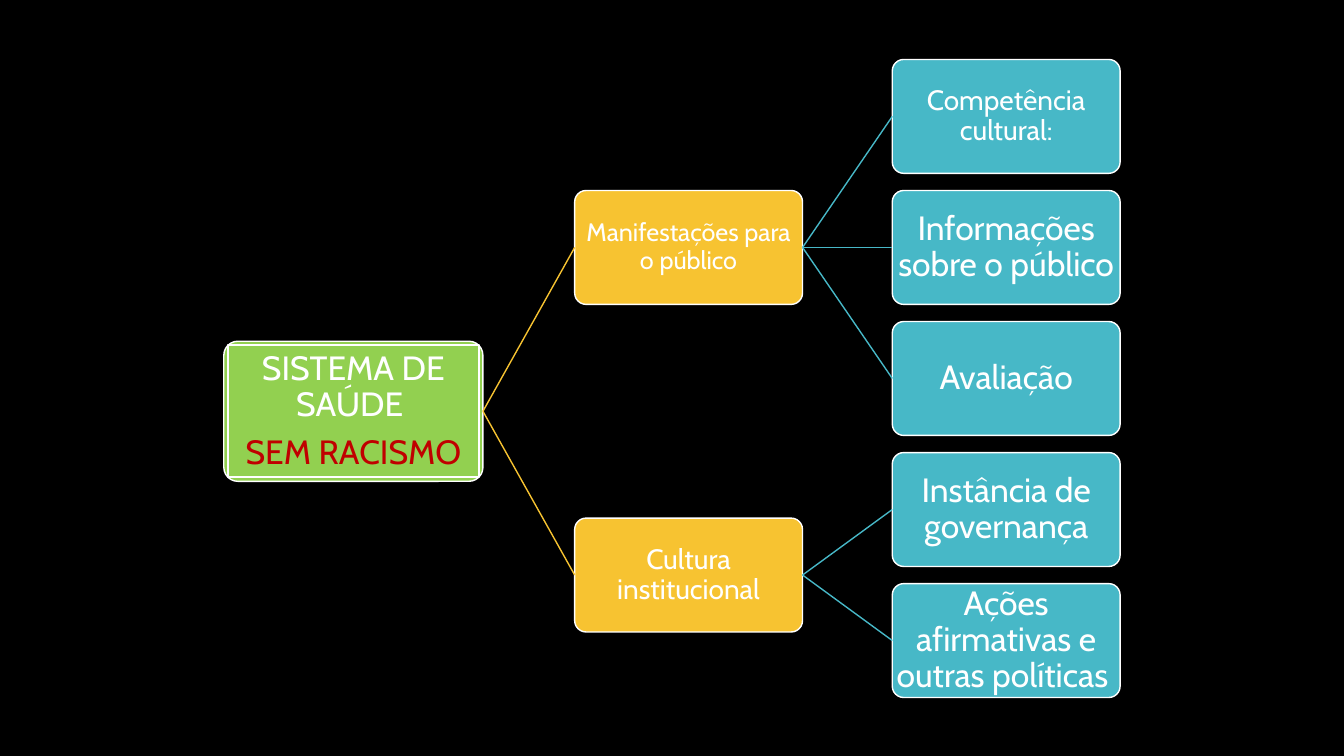
from lxml import etree
from pptx import Presentation
from pptx import util as u
from pptx.dml.color import RGBColor
from pptx.enum import shapes, text
from pptx.oxml.ns import qn

FONT = "Cabin"
WHITE, GREEN, RED = "FFFFFF", "92D050", "C00000"
YELLOW, TEAL = "F7C331", "47B8C7"
BOX_WIDTH, BOX_HEIGHT = 2.26, 1.13
LEAF_LEFT, LEAF_TOP, LEAF_PITCH = 8.85, 0.59, 1.3
BRANCH_LEFT = 5.7
ROOT_LEFT, ROOT_WIDTH, ROOT_HEIGHT = 2.22, 2.57, 1.39
ROOT_BORDER = 0.04

ROOT_LINES = [("SISTEMA DE SAÚDE ", WHITE), ("SEM RACISMO", RED)]
BRANCHES = [
    ("Manifestações para o público", 18, [
        ("Competência cultural:", 20),
        ("Informações sobre o público", 24),
        ("Avaliação", 24),
    ]),
    ("Cultura institucional", 20, [
        ("Instância de governança", 24),
        ("Ações afirmativas e outras políticas ", 24),
    ]),
]


def color(value):
    return RGBColor.from_string(value)


def add_box(slide, left, top, width, height, fill, rounded=True, line_width=1):
    kind = shapes.MSO_SHAPE.ROUNDED_RECTANGLE if rounded else shapes.MSO_SHAPE.RECTANGLE
    shape = slide.shapes.add_shape(
        kind, u.Inches(left), u.Inches(top), u.Inches(width), u.Inches(height))
    if rounded:
        shape.adjustments[0] = 0.1
    shape.shadow.inherit = False
    shape.fill.solid()
    shape.fill.fore_color.rgb = color(fill)
    shape.line.color.rgb = color(WHITE)
    shape.line.width = u.Pt(line_width)
    return shape


def write_text(shape, lines, size=24, inset=0.01):
    frame = shape.text_frame
    frame.word_wrap = True
    frame.vertical_anchor = text.MSO_ANCHOR.MIDDLE
    frame.margin_left = frame.margin_right = u.Inches(inset)
    frame.margin_top = frame.margin_bottom = u.Inches(inset)
    for index, (wording, font_color) in enumerate(lines):
        paragraph = frame.add_paragraph() if index else frame.paragraphs[0]
        paragraph.alignment = text.PP_ALIGN.CENTER
        paragraph.line_spacing = 0.9
        paragraph.space_after = u.Pt(size * 0.35)
        run = paragraph.add_run()
        run.text = wording
        run.font.name = FONT
        run.font.size = u.Pt(size)
        run.font.color.rgb = color(font_color)


def add_node(slide, left, top, wording, size, fill):
    shape = add_box(slide, left, top, BOX_WIDTH, BOX_HEIGHT, fill)
    write_text(shape, [(wording, WHITE)], size=size)
    return shape


def add_root(slide, left, top, width, height):
    frame = add_box(slide, left, top, width, height, GREEN)
    panel = add_box(slide, left + ROOT_BORDER, top + ROOT_BORDER,
                    width - 2 * ROOT_BORDER, height - 2 * ROOT_BORDER,
                    GREEN, rounded=False, line_width=1.5)
    write_text(panel, ROOT_LINES, inset=0.02)
    return frame


def link(slide, parent, child, line_color):
    connector = slide.shapes.add_connector(shapes.MSO_CONNECTOR.STRAIGHT, 0, 0, 0, 0)
    connector.begin_connect(parent, 3)
    connector.end_connect(child, 1)
    connector.line.color.rgb = color(line_color)
    connector.line.width = u.Pt(1)
    etree.SubElement(connector._element.spPr, qn("a:effectLst"))


def add_branch(slide, top, wording, size, leaves):
    middle = top + (len(leaves) - 1) * LEAF_PITCH / 2
    branch = add_node(slide, BRANCH_LEFT, middle, wording, size, YELLOW)
    for row, (leaf_wording, leaf_size) in enumerate(leaves):
        leaf = add_node(slide, LEAF_LEFT, top + row * LEAF_PITCH,
                        leaf_wording, leaf_size, TEAL)
        link(slide, branch, leaf, TEAL)
    return branch, middle + BOX_HEIGHT / 2


def add_tree(slide, top):
    branches, centers = [], []
    for wording, size, leaves in BRANCHES:
        branch, center = add_branch(slide, top, wording, size, leaves)
        branches.append(branch)
        centers.append(center)
        top += len(leaves) * LEAF_PITCH
    root_top = sum(centers) / len(centers) - ROOT_HEIGHT / 2
    root = add_root(slide, ROOT_LEFT, root_top, ROOT_WIDTH, ROOT_HEIGHT)
    for branch in branches:
        link(slide, root, branch, YELLOW)


def main():
    presentation = Presentation()
    presentation.slide_width = u.Inches(13.33)
    presentation.slide_height = u.Inches(7.5)
    slide = presentation.slides.add_slide(presentation.slide_layouts[6])
    slide.background.fill.solid()
    slide.background.fill.fore_color.rgb = color("000000")
    add_tree(slide, LEAF_TOP)
    presentation.save("out.pptx")


if __name__ == "__main__":
    main()
